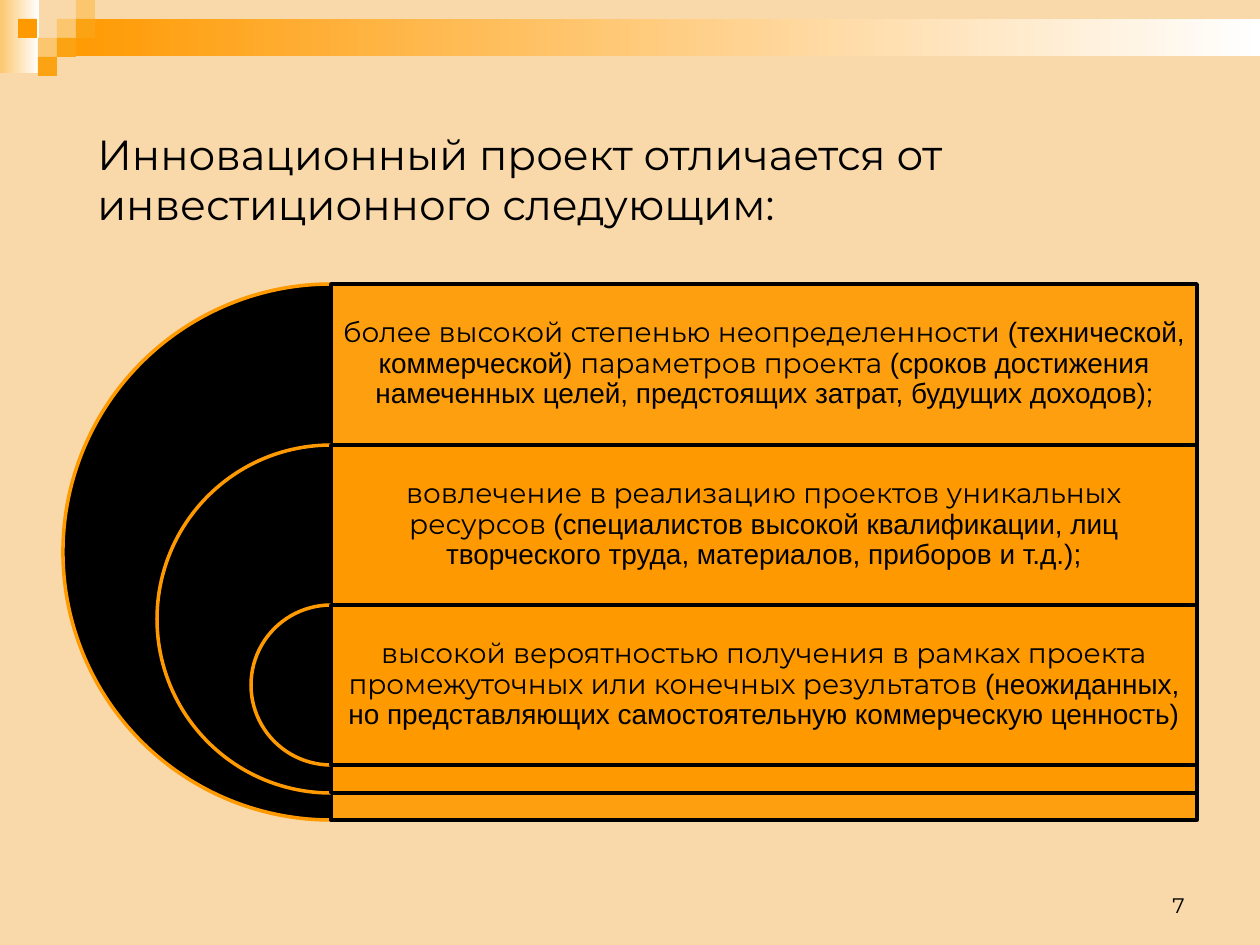
import pptx
import pptx.dml.color
import pptx.enum.shapes
import pptx.enum.text
import pptx.oxml
import pptx.oxml.ns
import pptx.util

SHAPE = pptx.enum.shapes.MSO_SHAPE
ALIGN = pptx.enum.text.PP_ALIGN
ANCHOR = pptx.enum.text.MSO_ANCHOR
EMU_PER_PX = 914400 / 126

ORANGE, AMBER, PEACH, BLACK, WHITE = "FF9900", "FBA313", "FCC66E", "000000", "FFFFFF"
HEAD, BODY = "Montserrat", "Arial"

# Checker squares: left, top, colour
SQUARE = 19
SQUARES = [
    (57, 19, PEACH), (76, 0, PEACH), (76, 19, AMBER), (38, 38, PEACH),
    (18, 19, ORANGE), (57, 38, AMBER), (38, 57, AMBER),
]

# Nested bands: top, height, text runs
CENTER_X, RIGHT_X, ROW_H = 331, 1197, 160
BANDS = [
    (284, 536, [
        ("более высокой степенью неопределенности ", HEAD),
        ("(технической, коммерческой) ", BODY),
        ("параметров проекта ", HEAD),
        ("(сроков достижения намеченных целей, предстоящих затрат, будущих доходов)", BODY),
        (";", HEAD),
    ]),
    (445, 348, [
        ("вовлечение в реализацию проектов уникальных ресурсов ", HEAD),
        ("(специалистов высокой квалификации, лиц творческого труда, "
         "материалов, приборов и т.д.);", BODY),
    ]),
    (605, 160, [
        ("высокой вероятностью получения в рамках проекта "
         "промежуточных или конечных результатов ", HEAD),
        ("(неожиданных, но представляющих самостоятельную коммерческую ценность)", BODY),
    ]),
]


def px(n):
    return pptx.util.Emu(round(n * EMU_PER_PX))


def rgb(color):
    return pptx.dml.color.RGBColor.from_string(color)


def add_box(s, kind, box, fill, line=None, alpha=None):
    sp = s.shapes.add_shape(kind, *map(px, box))
    sp.shadow.inherit = False
    sp.fill.solid()
    sp.fill.fore_color.rgb = rgb(fill)
    if alpha is not None:
        clr = sp.fill._xPr.find(".//" + pptx.oxml.ns.qn("a:srgbClr"))
        clr.append(pptx.oxml.parse_xml(
            f'<a:alpha {pptx.oxml.ns.nsdecls("a")} val="{alpha * 1000}"/>'))
    if line:
        sp.line.color.rgb = rgb(line)
        sp.line.width = pptx.util.Pt(2)
    else:
        sp.line.fill.background()
    return sp


def add_gradient(s, box, start, end):
    sp = add_box(s, SHAPE.RECTANGLE, box, start)
    sp.fill.gradient()
    sp.fill.gradient_angle = 0
    for stop, color in zip(sp.fill.gradient_stops, (start, end)):
        stop.color.rgb = rgb(color)


def add_text(s, box, runs, size, align=ALIGN.LEFT, anchor=ANCHOR.MIDDLE):
    tf = s.shapes.add_textbox(*map(px, box)).text_frame
    tf.word_wrap = True
    tf.vertical_anchor = anchor
    p = tf.paragraphs[0]
    p.alignment = align
    for text, font in runs:
        r = p.add_run()
        r.text = text
        r.font.name = font
        r.font.size = pptx.util.Pt(size)
        r.font.color.rgb = rgb(BLACK)
    return tf


def add_band(s, top, height, runs):
    width = RIGHT_X - CENTER_X
    pie = add_box(s, SHAPE.PIE, (CENTER_X - height // 2, top, height, height), BLACK, ORANGE)
    pie.adjustments[0], pie.adjustments[1] = 54, 162  # left half
    add_box(s, SHAPE.RECTANGLE, (CENTER_X, top, width, height), ORANGE, BLACK, alpha=90)
    tf = add_text(s, (CENTER_X, top, width, ROW_H), runs, 16, ALIGN.CENTER)
    tf.margin_left = tf.margin_right = tf.margin_top = tf.margin_bottom = px(9)
    tf.paragraphs[0].line_spacing = 0.9
    tf.paragraphs[0].space_after = pptx.util.Pt(5.6)


def main():
    prs = pptx.Presentation()
    prs.slide_width, prs.slide_height = px(1260), px(945)
    s = prs.slides.add_slide(prs.slide_layouts[6])
    s.background.fill.solid()
    s.background.fill.fore_color.rgb = rgb("F9D9A9")

    # Header decoration
    add_gradient(s, (0, 0, 39, 73), PEACH, WHITE)
    add_gradient(s, (57, 19, 1203, 37), ORANGE, WHITE)
    for left, top, color in SQUARES:
        add_box(s, SHAPE.RECTANGLE, (left, top, SQUARE, SQUARE), color)

    # Title
    add_text(s, (85, 126, 1134, 105),
             [("Инновационный проект отличается от инвестиционного следующим:", HEAD)], 24)

    # Nested half circles with their text rows
    for band in BANDS:
        add_band(s, *band)

    # Slide number
    add_text(s, (903, 861, 294, 63), [("7", HEAD)], 12, ALIGN.RIGHT, ANCHOR.BOTTOM)

    prs.save("out.pptx")


if __name__ == "__main__":
    main()
